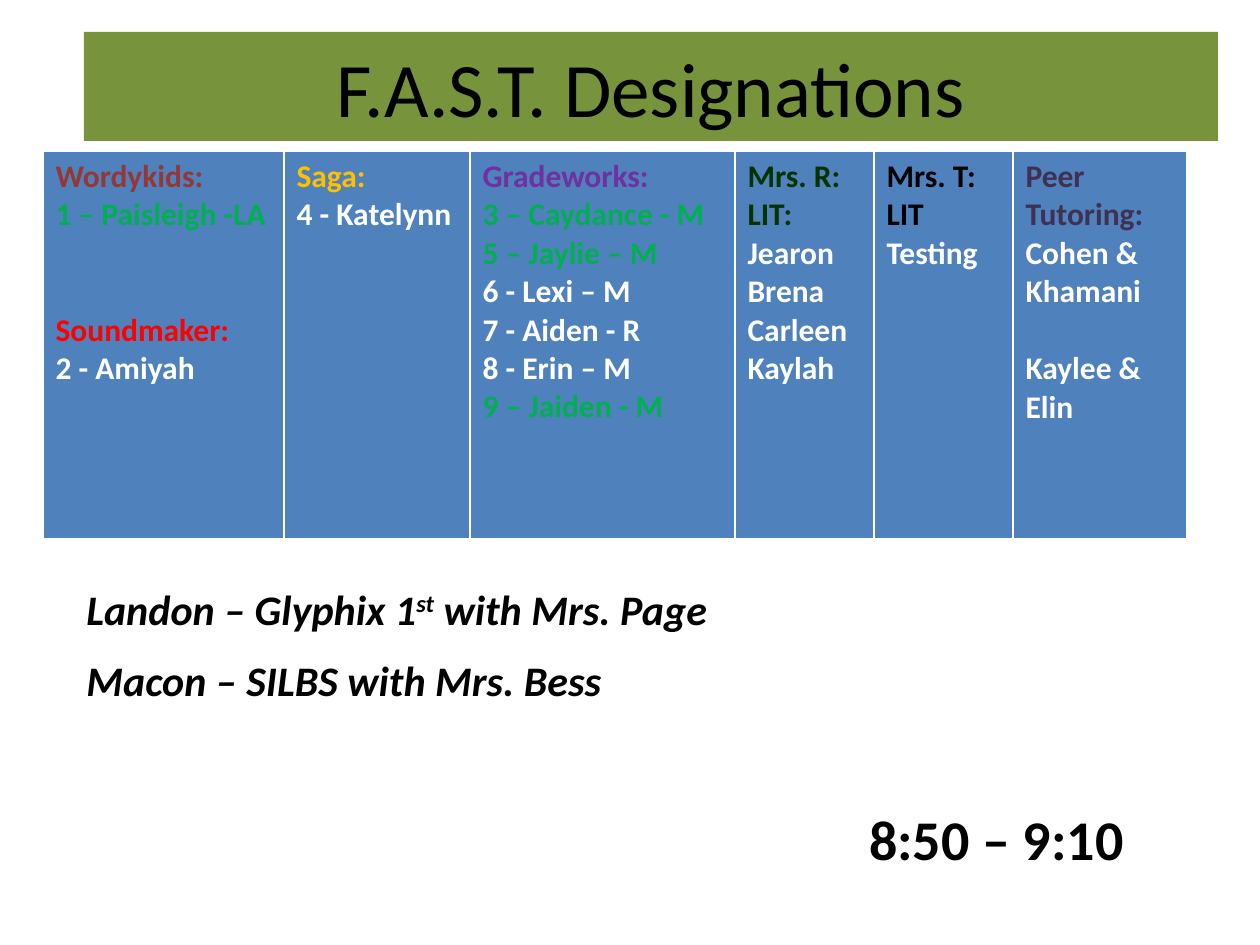
from pptx import Presentation
from pptx.dml.color import RGBColor
from pptx.enum.text import MSO_ANCHOR, MSO_AUTO_SIZE, PP_ALIGN
from pptx.util import Pt

CENTER, LEFT = PP_ALIGN.CENTER, PP_ALIGN.LEFT
MIDDLE = MSO_ANCHOR.MIDDLE
NO_FIT = MSO_AUTO_SIZE.NONE
PX = 914400 / 126
LINE = 22  # points in one line of table text
COLORS = {
    "olive": "77933C", "blue": "4F81BD", "black": "000000", "white": "FFFFFF",
    "brown": "953735", "green": "00B050", "red": "FF0000", "gold": "FFC000",
    "purple": "7030A0", "forest": "003300", "plum": "403152",
}


def px(*lengths):
    return [round(length * PX) for length in lengths]


def style(span, size, color="black", bold=True, italic=False):
    span.font.name = "Calibri"
    span.font.size = Pt(size)
    span.font.bold = bold
    span.font.italic = italic
    span.font.color.rgb = RGBColor.from_string(COLORS[color])


deck = Presentation()
deck.slide_width, deck.slide_height = px(1260, 945)
page = deck.slides.add_slide(deck.slide_layouts[5])

# Title banner
title = page.shapes.title
title.left, title.top, title.width, title.height = px(84, 32, 1134, 109)
title.fill.solid()
title.fill.fore_color.rgb = RGBColor.from_string(COLORS["olive"])
title.text_frame.text = "F.A.S.T. Designations"
title.text_frame.auto_size = NO_FIT
title.text_frame.vertical_anchor = MIDDLE
title.text_frame.paragraphs[0].alignment = CENTER
style(title.text_frame.paragraphs[0].runs[0], 44, bold=False)

# Time and notes: position, alignment, size, italic, spans as (text, baseline)
notes = [
    ((819, 798, 368, 81), CENTER, 32, False, [("8:50 – 9:10 ", 0)]),
    ((74, 577, 1144, 63), LEFT, 24, True,
     [("Landon – Glyphix 1", 0), ("st", 30000), (" with Mrs. Page", 0)]),
    ((74, 648, 609, 63), LEFT, 24, True, [("Macon – SILBS with Mrs. Bess", 0)]),
]
for place, alignment, size, italic, spans in notes:
    box = page.shapes.add_textbox(*px(*place))
    box.text_frame.word_wrap = True
    para = box.text_frame.paragraphs[0]
    para.alignment = alignment
    for text, baseline in spans:
        span = para.add_run()
        span.text = text
        style(span, size, italic=italic)
        if baseline:
            span.font._element.set("baseline", str(baseline))

# Groups: column width and lines as (text, color, blank lines above)
groups = [
    (241, [("Wordykids:", "brown", 0), ("1 – Paisleigh -LA", "green", 0),
           ("Soundmaker:", "red", 2), ("2 - Amiyah", "white", 0)]),
    (186, [("Saga:", "gold", 0), ("4 - Katelynn", "white", 0)]),
    (265, [("Gradeworks:", "purple", 0), ("3 – Caydance - M", "green", 0),
           ("5 – Jaylie – M", "green", 0), ("6 - Lexi – M", "white", 0),
           ("7 - Aiden - R", "white", 0), ("8 - Erin – M", "white", 0),
           ("9 – Jaiden - M", "green", 0)]),
    (139, [("Mrs. R:", "forest", 0), ("LIT:", "forest", 0), ("Jearon", "white", 0),
           ("Brena", "white", 0), ("Carleen", "white", 0), ("Kaylah", "white", 0)]),
    (139, [("Mrs. T:", "black", 0), ("LIT", "black", 0), ("Testing", "white", 0)]),
    (174, [("Peer Tutoring:", "plum", 0), ("Cohen & Khamani", "white", 0),
           ("Kaylee & Elin", "white", 1)]),
]
table_width = sum(width for width, lines in groups)
table = page.shapes.add_table(1, len(groups), *px(43, 151, table_width, 388)).table
for column, (width, lines) in enumerate(groups):
    table.columns[column].width = px(width)[0]
    cell = table.cell(0, column)
    cell.fill.solid()
    cell.fill.fore_color.rgb = RGBColor.from_string(COLORS["blue"])
    cell.text_frame.text = "\n".join(text for text, color, gap in lines)
    for para, (text, color, gap) in zip(cell.text_frame.paragraphs, lines):
        if gap:
            para.space_before = Pt(gap * LINE)
        style(para.runs[0], 18, color)

deck.save("out.pptx")
